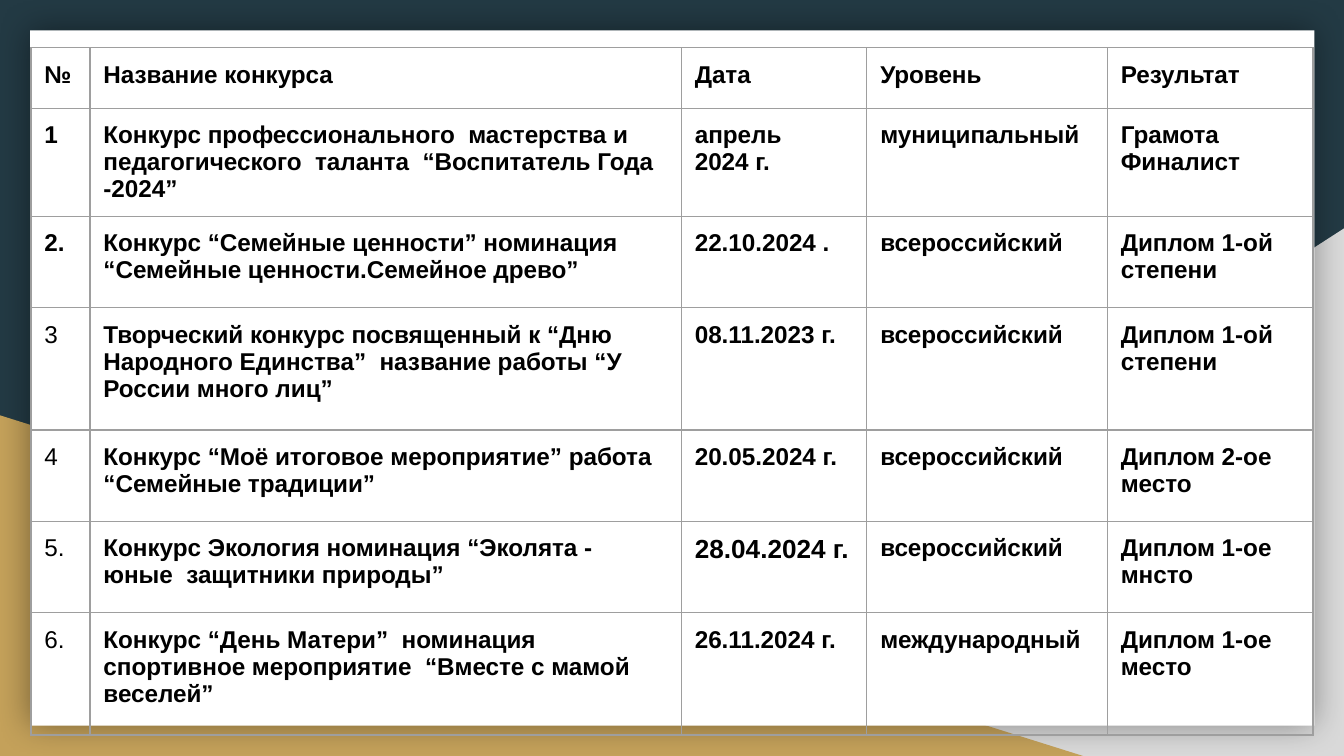
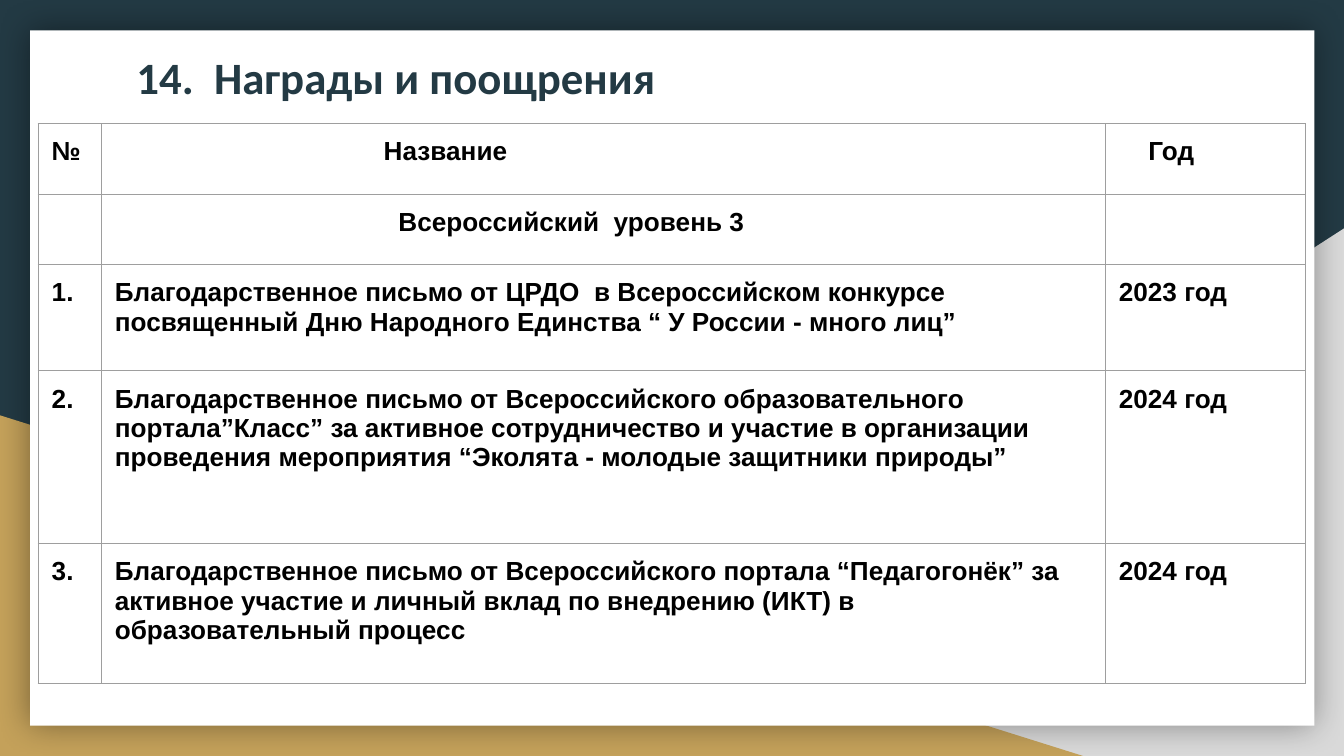
"""Builds two slides with tables of contests and awards."""
from dataclasses import dataclass

from lxml import etree
from pptx import Presentation
from pptx.dml.color import RGBColor
from pptx.enum.shapes import MSO_SHAPE
from pptx.enum.text import MSO_ANCHOR, MSO_AUTO_SIZE, PP_ALIGN
from pptx.oxml.ns import qn
from pptx.util import Pt

WEDGE, RECT = MSO_SHAPE.RIGHT_TRIANGLE, MSO_SHAPE.RECTANGLE
TOP, LEFT = MSO_ANCHOR.TOP, PP_ALIGN.LEFT
FIXED = MSO_AUTO_SIZE.NONE
TITLE_ONLY, BLANK = 5, 6
SCALE = 4572
WIDTH, HEIGHT = 2000, 1125
PAD = 20


@dataclass(frozen=True)
class Theme:
    """Holds colours, fonts and sizes."""
    navy: str = "233A44"
    gold: str = "C4A15A"
    grey: str = "D9D9D9"
    white: str = "FFFFFF"
    black: str = "000000"
    rule: str = "9E9E9E"
    body: str = "Arial"
    head: str = "Calibri"
    title: int = 24
    line: float = 0.75
    blur: int = 18


THEME = Theme()

DECOR = [
    (WEDGE, (784, 340, 1216, 785), THEME.grey, True),
    (WEDGE, (0, 618, 1612, 507), THEME.gold, False),
    (RECT, (45, 45, 1911, 1035), THEME.white, False),
]

RUSSIA = "всероссийский"
FIRST = "Диплом 1-ой степени"

SLIDES = [
    {
        "title": None,
        "at": (46, 71),
        "cols": [88, 880, 276, 358, 306],
        "heights": [90, 136, 136, 182, 136, 136, 182],
        "size": 13,
        "plain": [(row, 0) for row in range(3, 7)],
        "sizes": {(5, 2): 14},
        "insets": {},
        "rows": [
            ("№", "Название конкурса", "Дата", "Уровень", "Результат"),
            ("1", "Конкурс профессионального  мастерства и педагогического  таланта  “Воспитатель Года -2024”",
             "апрель\n2024 г.", "муниципальный", "Грамота Финалист"),
            ("2.", "Конкурс “Семейные ценности” номинация “Семейные ценности.Семейное древо”",
             "22.10.2024 .", RUSSIA, FIRST),
            ("3", "Творческий конкурс посвященный к “Дню Народного Единства”  название работы “У России много лиц”",
             "08.11.2023 г.", RUSSIA, FIRST),
            ("4", "Конкурс “Моё итоговое мероприятие” работа “Семейные традиции”",
             "20.05.2024 г.", RUSSIA, "Диплом 2-ое место"),
            ("5.", "Конкурс Экология номинация “Эколята - юные  защитники природы”",
             "28.04.2024 г.", RUSSIA, "Диплом 1-ое мнсто"),
            ("6.", "Конкурс “День Матери”  номинация спортивное мероприятие  “Вместе с мамой веселей”",
             "26.11.2024 г.", "международный", "Диплом 1-ое место"),
        ],
    },
    {
        "title": "14.  Награды и поощрения",
        "at": (57, 184),
        "cols": [94, 1494, 298],
        "heights": [105, 105, 158, 257, 208],
        "size": 14,
        "plain": [],
        "sizes": {},
        "insets": {(0, 1): 420, (0, 2): 64, (1, 1): 442},
        "rows": [
            ("№", "Название", "Год"),
            ("", "Всероссийский  уровень 3", ""),
            ("1.", "Благодарственное письмо от ЦРДО  в Всероссийском конкурсе "
             "посвященный Дню Народного Единства “ У России - много лиц”", "2023 год"),
            ("2.", "Благодарственное письмо от Всероссийского образовательного портала”Класс” "
             "за активное сотрудничество и участие в организации проведения мероприятия "
             "“Эколята - молодые защитники природы”", "2024 год"),
            ("3.", "Благодарственное письмо от Всероссийского портала “Педагогонёк” "
             "за активное участие и личный вклад по внедрению (ИКТ) в образовательный процесс",
             "2024 год"),
        ],
    },
]


def px(*vals):
    """Turns px into EMU."""
    return [val * SCALE for val in vals]


def style(frame, font, size, color, bold):
    """Formats every run of a text frame."""
    for para in frame.paragraphs:
        para.alignment = LEFT
        for run in para.runs:
            run.font.name = font
            run.font.size = Pt(size)
            run.font.bold = bold
            run.font.color.rgb = RGBColor.from_string(color)


def pad(box, left=PAD):
    """Sets the insets of a cell or text frame."""
    box.margin_left, box.margin_right = px(left, PAD)
    box.margin_top, box.margin_bottom = px(PAD, PAD)


def shade(shape):
    """Gives a shape a soft shadow."""
    glow = etree.SubElement(shape.element.spPr.find(qn("a:effectLst")), qn("a:outerShdw"),
                            blurRad=str(Pt(THEME.blur)), dist="0", dir="0",
                            algn="ctr", rotWithShape="0")
    color = etree.SubElement(glow, qn("a:srgbClr"), val=THEME.black)
    etree.SubElement(color, qn("a:alpha"), val="40000")


def adorn(master, slide):
    """Puts the shared backdrop on the master."""
    fill = master.background.fill
    fill.solid()
    fill.fore_color.rgb = RGBColor.from_string(THEME.navy)
    for num, (kind, place, color, flip) in enumerate(DECOR):
        shape = slide.shapes.add_shape(kind, *px(*place))
        shape.shadow.inherit = False
        shape.fill.solid()
        shape.fill.fore_color.rgb = RGBColor.from_string(color)
        shape.line.fill.background()
        if flip:
            shape.element.spPr.xfrm.set("flipH", "1")
        if kind == RECT:
            shade(shape)
        shape.element.nvSpPr.cNvPr.set("id", str(100 + num))
        master.shapes.element.insert(2 + num, shape.element)


def edge(cell):
    """Draws the four borders of a cell."""
    props = cell._tc.get_or_add_tcPr()
    for num, side in enumerate("LRTB"):
        line = etree.Element(qn("a:ln" + side), w=str(Pt(THEME.line)))
        fill = etree.SubElement(line, qn("a:solidFill"))
        etree.SubElement(fill, qn("a:srgbClr"), val=THEME.rule)
        props.insert(num, line)


def add_grid(slide, data):
    """Adds the table of a slide."""
    cols, highs = data["cols"], data["heights"]
    grid = slide.shapes.add_table(
        len(highs), len(cols), *px(*data["at"], sum(cols), sum(highs))).table
    grid.first_row = grid.horz_banding = False
    for col, wide in zip(grid.columns, px(*cols)):
        col.width = wide
    for row, high in zip(grid.rows, px(*highs)):
        row.height = high
    for r, texts in enumerate(data["rows"]):
        for c, text in enumerate(texts):
            cell, key = grid.cell(r, c), (r, c)
            cell.text_frame.text = text
            cell.vertical_anchor = TOP
            cell.fill.background()
            pad(cell, data["insets"].get(key, PAD))
            edge(cell)
            style(cell.text_frame, THEME.body, data["sizes"].get(key, data["size"]),
                  THEME.black, key not in data["plain"])


def add_title(slide, text):
    """Places and formats the title."""
    title = slide.shapes.title
    title.left, title.top, title.width, title.height = px(98, 54, 1654, 122)
    box = title.text_frame
    box.text = text
    box.word_wrap = True
    box.auto_size = FIXED
    box.vertical_anchor = TOP
    pad(box, 105)
    style(box, THEME.head, THEME.title, THEME.navy, True)


def main():
    """Builds and saves the deck."""
    deck = Presentation()
    deck.slide_width, deck.slide_height = px(WIDTH, HEIGHT)
    for num, data in enumerate(SLIDES):
        kind = TITLE_ONLY if data["title"] else BLANK
        slide = deck.slides.add_slide(deck.slide_layouts[kind])
        if num == 0:
            adorn(deck.slide_master, slide)
        if data["title"]:
            add_title(slide, data["title"])
        add_grid(slide, data)
    deck.save("out.pptx")


if __name__ == "__main__":
    main()
